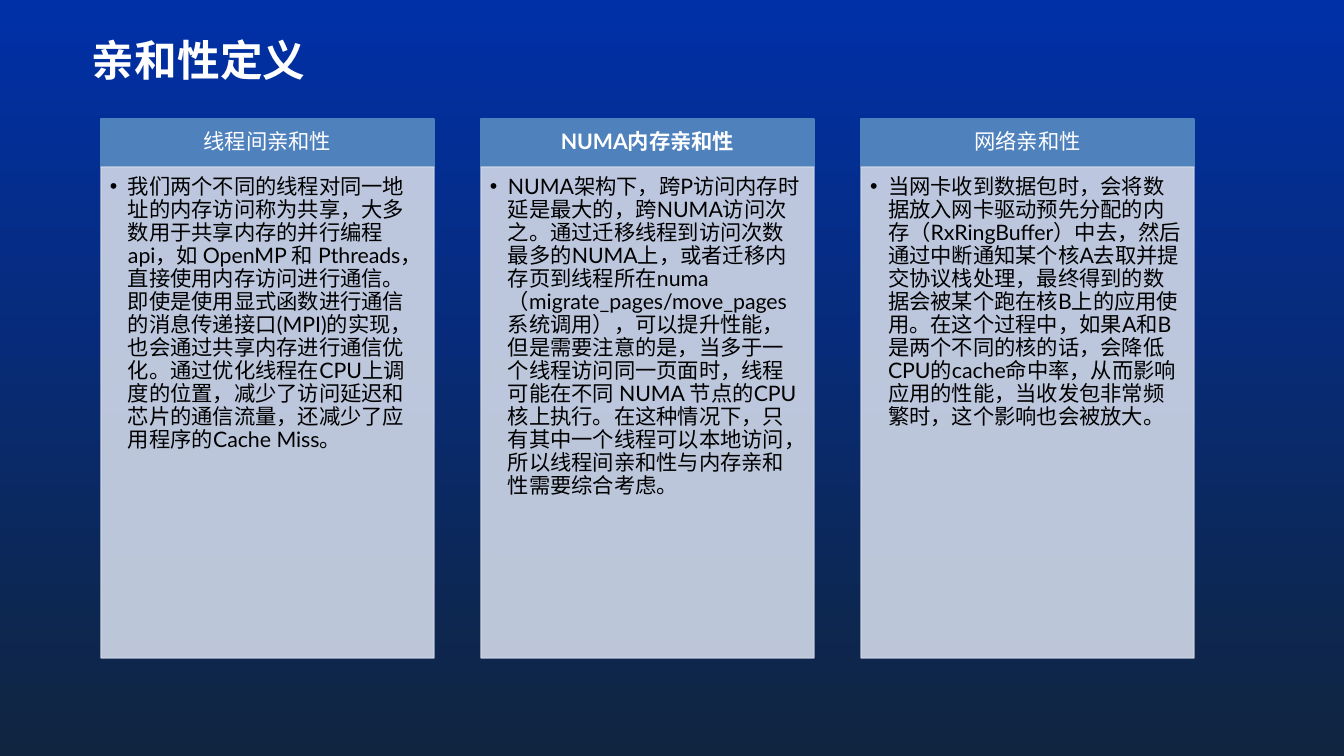
from lxml import etree
from pptx import Presentation, util as u
from pptx.dml.color import RGBColor
from pptx.enum import shapes, text
from pptx.oxml.ns import qn

# Content
TITLE = "亲和性定义"
COLUMNS = [  # heading, bold heading, body
    ("线程间亲和性", False,
     "我们两个不同的线程对同一地址的内存访问称为共享，大多数用于共享内存的并行编程 api，"
     "如 OpenMP 和 Pthreads，直接使用内存访问进行通信。即使是使用显式函数进行通信的"
     "消息传递接口(MPI)的实现，也会通过共享内存进行通信优化。通过优化线程在CPU上调度的位置，"
     "减少了访问延迟和芯片的通信流量，还减少了应用程序的Cache Miss。"),
    ("NUMA内存亲和性", True,
     "NUMA架构下，跨P访问内存时延是最大的，跨NUMA访问次之。通过迁移线程到访问次数最多的NUMA上，"
     "或者迁移内存页到线程所在numa（migrate_pages/move_pages系统调用），可以提升性能，"
     "但是需要注意的是，当多于一个线程访问同一页面时，线程可能在不同 NUMA 节点的CPU核上执行。"
     "在这种情况下，只有其中一个线程可以本地访问，所以线程间亲和性与内存亲和性需要综合考虑。"),
    ("网络亲和性", False,
     "当网卡收到数据包时，会将数据放入网卡驱动预先分配的内存（RxRingBuffer）中去，"
     "然后通过中断通知某个核A去取并提交协议栈处理，最终得到的数据会被某个跑在核B上的应用使用。"
     "在这个过程中，如果A和B是两个不同的核的话，会降低CPU的cache命中率，从而影响应用的性能，"
     "当收发包非常频繁时，这个影响也会被放大。"),
]

# Colours and layout, lengths in px
WHITE = RGBColor(0xFF, 0xFF, 0xFF)
BLACK = RGBColor(0x00, 0x00, 0x00)
SKY = RGBColor(0x00, 0x30, 0xA8)
NIGHT = RGBColor(0x10, 0x25, 0x3F)
HEADER_BLUE = RGBColor(0x4F, 0x81, 0xBD)
PANEL_BLUE = RGBColor(0xD0, 0xD8, 0xE8)
EMU_PER_PX = 9525
LEFT, TOP, WIDTH, PITCH = 101, 119, 333, 380
HEADER_HEIGHT, BODY_HEIGHT, INDENT = 48, 491, 18


def px(value):
    return u.Emu(value * EMU_PER_PX)


def write(shape, content, font, size, color, bold, margins):
    frame = shape.text_frame
    frame.text = content
    frame.margin_left, frame.margin_top, frame.margin_right, frame.margin_bottom = map(px, margins)
    paragraph = frame.paragraphs[0]
    paragraph.line_spacing = 0.9
    style = paragraph.runs[0].font
    style.name, style.size, style.bold = font, u.Pt(size), bold
    style.color.rgb = color
    return paragraph


def add_panel(slide, left, top, height, color):
    shape = slide.shapes.add_shape(
        shapes.MSO_SHAPE.RECTANGLE, px(left), px(top), px(WIDTH), px(height))
    shape.shadow.inherit = False
    shape.fill.solid()
    shape.fill.fore_color.rgb = color
    shape.line.color.rgb = color
    shape.line.width = u.Pt(1)
    shape.text_frame.word_wrap = True
    return shape


def set_opacity(shape, percent):
    for color in shape._element.spPr.iter(qn("a:srgbClr")):
        etree.SubElement(color, qn("a:alpha")).set("val", str(percent * 1000))


def add_bullet(paragraph):
    properties = paragraph._p.get_or_add_pPr()
    properties.set("marL", str(px(INDENT)))
    properties.set("indent", str(-px(INDENT)))
    etree.SubElement(properties, qn("a:buFont")).set("typeface", "Arial")
    etree.SubElement(properties, qn("a:buChar")).set("char", "•")


presentation = Presentation()
presentation.slide_width, presentation.slide_height = px(1344), px(756)
slide = presentation.slides.add_slide(presentation.slide_layouts[6])

# Background, dark towards the bottom
background = slide.background.fill
background.gradient()
background.gradient_angle = 270
for stop, color, position in zip(background.gradient_stops, (SKY, NIGHT), (0, 1)):
    stop.color.rgb = color
    stop.position = position

# Title
title = slide.shapes.add_textbox(px(92), px(40), px(215), px(46))
title.text_frame.word_wrap = False
write(title, TITLE, "Arial", 32, WHITE, True, (0, 0, 0, 0))

# Columns: heading above a translucent panel
for index, (heading, bold, body) in enumerate(COLUMNS):
    left = LEFT + index * PITCH
    header = add_panel(slide, left, TOP, HEADER_HEIGHT, HEADER_BLUE)
    header.text_frame.vertical_anchor = text.MSO_ANCHOR.MIDDLE
    paragraph = write(header, heading, "Lato", 16, WHITE, bold, (12, 7, 12, 7))
    paragraph.alignment = text.PP_ALIGN.CENTER

    panel = add_panel(slide, left, TOP + HEADER_HEIGHT, BODY_HEIGHT, PANEL_BLUE)
    set_opacity(panel, 90)
    panel.text_frame.vertical_anchor = text.MSO_ANCHOR.TOP
    paragraph = write(panel, body, "Lato", 16, BLACK, False, (9, 9, 12, 13))
    paragraph.alignment = text.PP_ALIGN.LEFT
    add_bullet(paragraph)

presentation.save("out.pptx")
